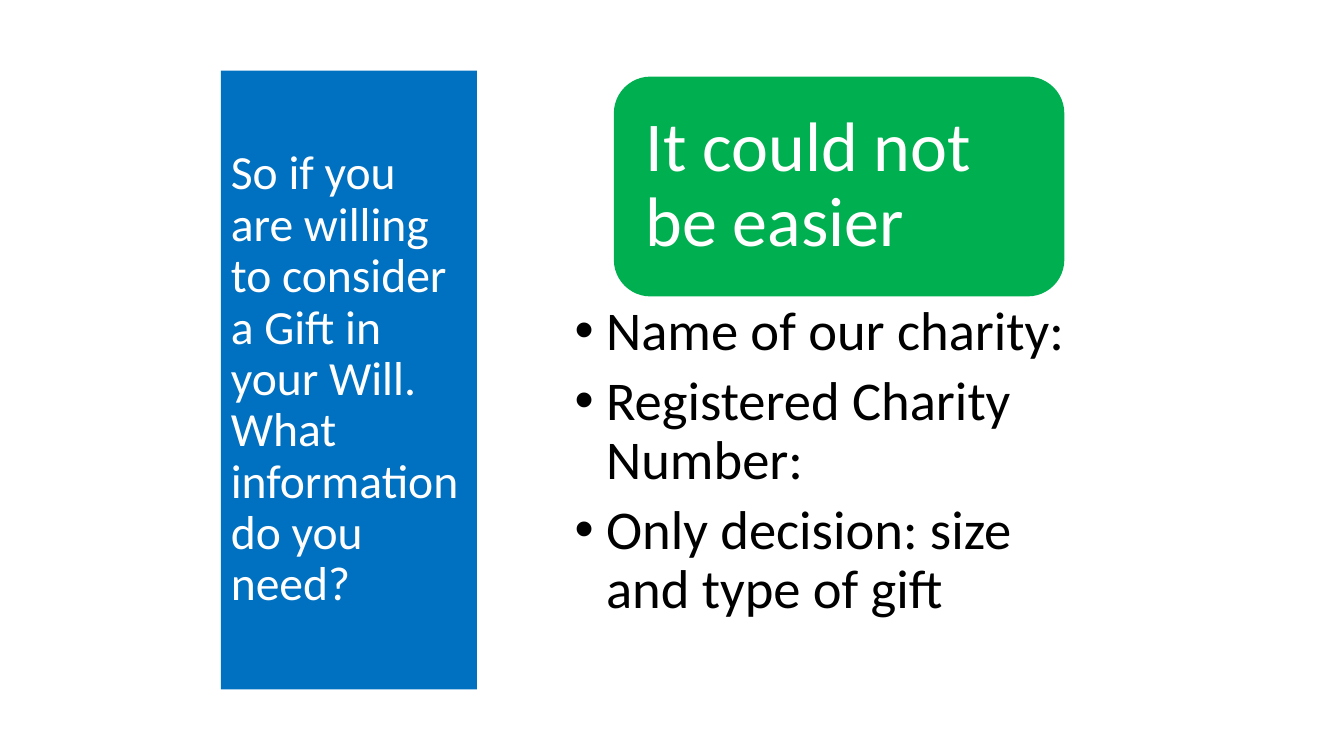
import pptx
import pptx.util
import pptx.dml.color
import pptx.enum.shapes
import pptx.enum.text

Pt = pptx.util.Pt
MSO = pptx.enum.text

# Content
title = ("So if you are willing to consider a Gift in your Will. "
         "What information do you need?")
head = "It could not be easier"
needs = [
    "Name of our charity:",
    "Registered Charity Number:",
    "Only decision: size and type of gift",
]

# Theme: colours and type sizes
theme = {
    "font": "Calibri",
    "blue": "0070C0", "green": "00B050", "white": "FFFFFF", "black": "000000",
    "title": 34, "head": 50, "list": 39,
}

# Layout in points: left, top, width, height
panel = (157.7, 50.4, 182.9, 442.1)
badge = (438.5, 54.7, 321.8, 157)
below = (397.4, badge[1] + badge[3], 404.6, 244.8)
hang = 22.5


def tint(name):
    return pptx.dml.color.RGBColor.from_string(theme[name])


def place(shape, box):
    shape.left, shape.top, shape.width, shape.height = map(Pt, box)


def paint(shape, name):
    shape.fill.solid()
    shape.fill.fore_color.rgb = tint(name)
    shape.line.fill.background()


def write(shape, lines, size, ink, pads, anchor, after=0):
    frame = shape.text_frame
    frame.text = "\n".join(lines)
    frame.word_wrap = True
    frame.auto_size = MSO.MSO_AUTO_SIZE.NONE
    frame.vertical_anchor = anchor
    (frame.margin_left, frame.margin_top,
     frame.margin_right, frame.margin_bottom) = map(Pt, pads)
    for para in frame.paragraphs:
        para.alignment = MSO.PP_ALIGN.LEFT
        para.line_spacing = 0.9
        para.space_before = Pt(0)
        para.space_after = Pt(after)
        for run in para.runs:
            run.font.name = theme["font"]
            run.font.size = Pt(theme[size])
            run.font.color.rgb = tint(ink)


deck = pptx.Presentation()
deck.slide_width, deck.slide_height = Pt(960), Pt(540)
slide = deck.slides.add_slide(deck.slide_layouts[1])
middle, top = MSO.MSO_ANCHOR.MIDDLE, MSO.MSO_ANCHOR.TOP

# Blue title panel
name = slide.shapes.title
place(name, panel)
paint(name, "blue")
write(name, [title], "title", "white", (7.2, 3.6, 7.2, 3.6), middle)

# Green heading
card = slide.shapes.add_shape(
    pptx.enum.shapes.MSO_SHAPE.ROUNDED_RECTANGLE, *map(Pt, badge))
card.shadow.inherit = False
paint(card, "green")
write(card, [head], "head", "white", (15, 15, 15, 15), middle)

# Bulleted list with a hanging indent
body = slide.placeholders[1]
place(body, below)
write(body, needs, "list", "black", (13, 5, 28, 5), top, after=8)
for para in body.text_frame.paragraphs:
    props = para._p.get_or_add_pPr()
    props.set("marL", str(Pt(hang)))
    props.set("indent", str(-Pt(hang)))

deck.save("out.pptx")
